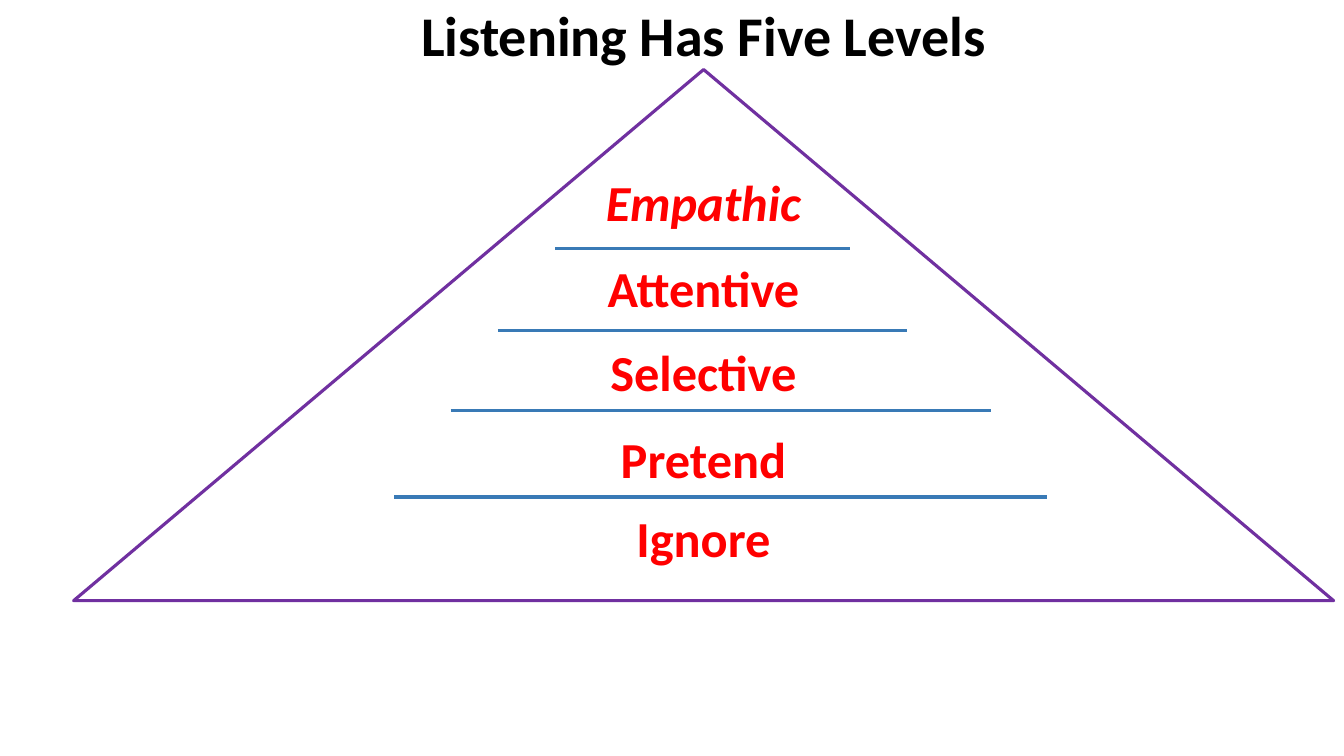
"""Build a slide showing the five levels of listening as a pyramid."""
from lxml.etree import SubElement
from pptx import Presentation
from pptx.dml.color import RGBColor
from pptx.enum.shapes import MSO_CONNECTOR, MSO_SHAPE
from pptx.enum.text import MSO_ANCHOR, PP_ALIGN
from pptx.oxml.ns import qn
from pptx.util import Pt

TITLE = "Listening Has Five Levels"
LEVELS = [
    ("Empathic", 118.8, 225, True),
    ("Attentive", 180, 233, False),
    ("Selective", 239.8, 197, False),
    ("Pretend", 302.4, 218, False),
    ("Ignore", 358.6, 274, False),
]
RULES = [
    (396.7, 607, 177.8),
    (355.7, 648, 236.2),
    (321.8, 707.8, 293),
    (281.5, 748, 355),
]
MID = 502.5
RED, BLUE, PURPLE, BLACK = "FF0000", "397AB6", "7030A0", "000000"


def color(code):
    return RGBColor.from_string(code)


def write(box, text, size=36, hue=RED, italic=False, inset=(7.2, 3.6)):
    frame = box.text_frame
    frame.word_wrap = True
    frame.vertical_anchor = MSO_ANCHOR.TOP
    frame.margin_left = frame.margin_right = Pt(inset[0])
    frame.margin_top = frame.margin_bottom = Pt(inset[1])
    para = frame.paragraphs[0]
    para.alignment = PP_ALIGN.CENTER
    run = para.add_run()
    run.text = text
    font = run.font
    font.name, font.size = "Calibri", Pt(size)
    font.bold, font.italic = True, italic
    font.color.rgb = color(hue)


def place(left, top, width, height):
    return [Pt(n) for n in (left, top, width, height)]


def main():
    deck = Presentation()
    deck.slide_width, deck.slide_height = Pt(960), Pt(540)
    slide = deck.slides.add_slide(deck.slide_layouts[5])
    shapes = slide.shapes

    title = shapes.title
    title.left, title.top, title.width, title.height = place(
        MID - 327, -4.3, 654, 54)
    write(title, TITLE, size=40, hue=BLACK, inset=(9.4, 5))

    for left, right, top in RULES:
        rule = shapes.add_connector(
            MSO_CONNECTOR.STRAIGHT, Pt(left), Pt(top), Pt(right), Pt(top))
        rule.line.color.rgb = color(BLUE)
        rule.line.width = Pt(2.25)
        SubElement(rule._element.spPr, qn("a:effectLst"))

    for name, top, width, italic in LEVELS:
        box = shapes.add_textbox(*place(MID - width / 2, top, width, 51))
        write(box, name, italic=italic)

    peak = shapes.add_shape(
        MSO_SHAPE.ISOSCELES_TRIANGLE, *place(52.6, 49.7, 900, 379.4))
    peak.shadow.inherit = False
    peak.fill.background()
    peak.line.color.rgb = color(PURPLE)
    peak.line.width = Pt(2.25)

    deck.save("out.pptx")


if __name__ == "__main__":
    main()
